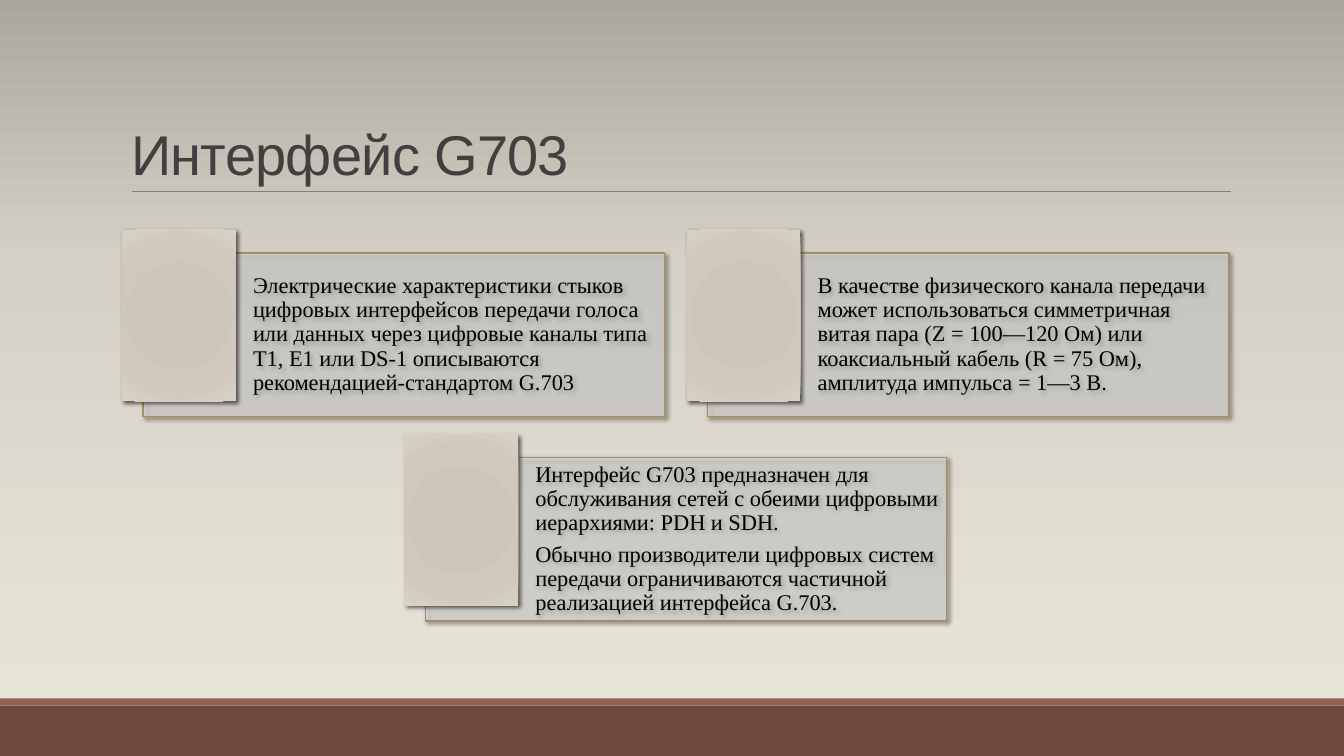
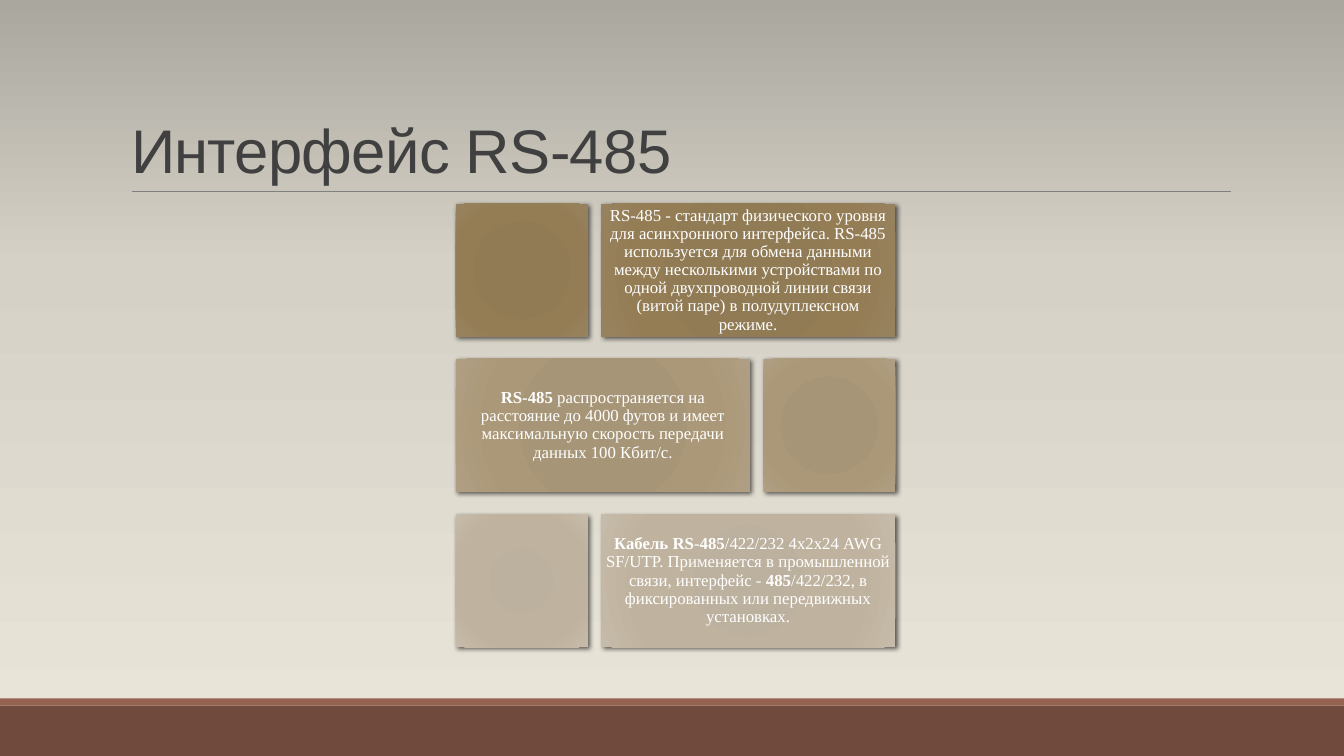
from lxml import etree
from pptx import Presentation
from pptx.dml.color import RGBColor
from pptx.enum.shapes import MSO_CONNECTOR, MSO_SHAPE
from pptx.enum.text import MSO_ANCHOR, MSO_AUTO_SIZE, PP_ALIGN
from pptx.oxml.ns import qn
from pptx.util import Inches, Pt

RECT = MSO_SHAPE.RECTANGLE
STRAIGHT = MSO_CONNECTOR.STRAIGHT
LEFT, CENTER = PP_ALIGN.LEFT, PP_ALIGN.CENTER
BOTTOM, MIDDLE = MSO_ANCHOR.BOTTOM, MSO_ANCHOR.MIDDLE
NO_FIT = MSO_AUTO_SIZE.NONE

TITLE_FONT, BODY_FONT = "Arial", "Times New Roman"
TITLE_COLOR, RULE_COLOR, CARD_LINE = "404040", "808080", "A28E6A"
BAND_COLOR, STRIPE_COLOR = "704A3D", "956251"
BACKGROUND = [(0, "EBE6DA"), (65, "D5D1C6"), (100, "AAA79F")]


def circle_stops(*colors):
    """Pair four colours with the stops of a tile gradient."""
    return list(zip((0, 34, 70, 100), colors))


PICTURE_TILE = circle_stops("CBC3B7", "CCC5BA", "D0C8BC", "D8D1C6")
ROW_TILES = [
    circle_stops("907A53", "907B55", "947D55", "96825E"),
    circle_stops("A69476", "A79578", "AB9879", "AF9E83"),
    circle_stops("BBAE9C", "BCB09E", "BFB39F", "C6BBAA"),
]

G703_CARDS = [
    (1.21, 2.28, ["Электрические характеристики стыков цифровых интерфейсов передачи "
                  "голоса или данных через цифровые каналы типа T1, E1 или DS-1 "
                  "описываются рекомендацией-стандартом G.703"]),
    (6.81, 2.28, ["В качестве физического канала передачи может использоваться "
                  "симметричная витая пара (Z = 100—120 Ом) или коаксиальный кабель "
                  "(R = 75 Ом), амплитуда импульса = 1—3 В."]),
    (4.01, 4.31, ["Интерфейс G703 предназначен для обслуживания сетей с обеими "
                  "цифровыми иерархиями: PDH и SDH.",
                  "Обычно производители цифровых систем передачи ограничиваются "
                  "частичной реализацией интерфейса G.703."]),
]

RS485_ROWS = [
    "RS-485 - стандарт физического уровня для асинхронного интерфейса. RS-485 "
    "используется для обмена данными между несколькими устройствами по одной "
    "двухпроводной линии связи (витой паре) в полудуплексном режиме.",
    "*RS-485* распространяется на расстояние до 4000 футов и имеет максимальную "
    "скорость передачи данных 100 Кбит/с.",
    "*Кабель RS*-*485*/422/232 4х2х24 AWG SF/UTP. Применяется в промышленной связи, "
    "интерфейс - *485*/422/232, в фиксированных или передвижных установках.",
]


def rgb(color):
    """Turn a hex string into a colour."""
    return RGBColor.from_string(color)


def add_child(parent, tag, **attrs):
    """Append a DrawingML element and return it."""
    child = etree.SubElement(parent, qn(tag))
    for name, value in attrs.items():
        child.set(name, str(value))
    return child


def set_gradient(fill, parent, stops, angle=None):
    """Give a linear gradient, or a circular one when no angle is given."""
    fill.solid()
    fill.fore_color.rgb = rgb(stops[0][1])
    grad = etree.Element(qn("a:gradFill"))
    grad.set("rotWithShape", "1")
    gs_list = add_child(grad, "a:gsLst")
    for position, color in stops:
        gs = add_child(gs_list, "a:gs", pos=position * 1000)
        add_child(gs, "a:srgbClr", val=color)
    if angle is None:
        path = add_child(grad, "a:path", path="circle")
        add_child(path, "a:fillToRect", l=100000, t=100000, r=100000, b=100000)
    else:
        add_child(grad, "a:lin", ang=angle * 60000, scaled=0)
    parent.replace(parent.find(qn("a:solidFill")), grad)


def add_rect(s, x, y, w, h, color):
    """Add a plain rectangle without line or shadow."""
    sp = s.shapes.add_shape(RECT, Inches(x), Inches(y), Inches(w), Inches(h))
    sp.shadow.inherit = False
    sp.fill.solid()
    sp.fill.fore_color.rgb = rgb(color)
    sp.line.fill.background()
    return sp


def add_shadow(sp, blur):
    """Add a soft shadow to the lower right."""
    effects = sp.element.spPr.find(qn("a:effectLst"))
    shadow = add_child(effects, "a:outerShdw", blurRad=Pt(blur), dist=Pt(2),
                       dir=45 * 60000, algn="tl", rotWithShape=0)
    color = add_child(shadow, "a:srgbClr", val="000000")
    add_child(color, "a:alpha", val=60000)


def add_tile(s, x, y, w, h, stops, blur):
    """Add a rectangle with a circular gradient and a shadow."""
    sp = add_rect(s, x, y, w, h, stops[0][1])
    set_gradient(sp.fill, sp.element.spPr, stops)
    add_shadow(sp, blur)
    return sp


def set_text(sp, paragraphs, size, color, align, inset, left_inset):
    """Write paragraphs into a shape, with bold parts between asterisks."""
    tf = sp.text_frame
    tf.word_wrap = True
    tf.vertical_anchor = MIDDLE
    tf.margin_left = Inches(left_inset)
    tf.margin_top = tf.margin_right = tf.margin_bottom = Inches(inset)
    for i, text in enumerate(paragraphs):
        p = tf.paragraphs[0] if i == 0 else tf.add_paragraph()
        p.alignment = align
        p.line_spacing = 0.9
        p.space_after = Pt(size * 0.35)
        p.font.name = BODY_FONT
        p.font.size = Pt(size)
        p.font.color.rgb = rgb(color)
        for j, part in enumerate(text.split("*")):
            if part:
                r = p.add_run()
                r.text = part
                if j % 2:
                    r.font.bold = True


def add_card(s, x, y, paragraphs):
    """Add a translucent text card with a tile over its left corner."""
    sp = add_rect(s, x + 0.21, y + 0.23, 5.17, 1.62, "FFFFFF")
    color = sp.element.spPr.find(qn("a:solidFill"))[0]
    add_child(color, "a:alpha", val=40000)
    sp.line.color.rgb = rgb(CARD_LINE)
    sp.line.width = Pt(1)
    add_shadow(sp, 3)
    set_text(sp, paragraphs, 16, "000000", LEFT, 0.07, 1.09)
    add_tile(s, x, y, 1.13, 1.7, PICTURE_TILE, 3)


def add_rows(s, texts):
    """Add rows of a square and a text tile that swap sides in turn."""
    left, top, square, wide, height, gap, pitch = 4.52, 2.02, 1.31, 2.92, 1.32, 0.13, 1.54
    for i, (text, stops) in enumerate(zip(texts, ROW_TILES)):
        y = top + i * pitch
        if i % 2:
            wide_x, square_x = left, left + wide + gap
        else:
            wide_x, square_x = left + square + gap, left
        sp = add_tile(s, wide_x, y, wide, height, stops, 3.5)
        set_text(sp, [text], 12, "FFFFFF", CENTER, 0.05, 0.05)
        add_tile(s, square_x, y, square, height, stops, 3.5)


def style_template(prs, layout, s):
    """Set the background, and move the bands and title rule to the layout."""
    fill = prs.slide_master.background.fill
    fill.solid()
    bg = prs.slide_master.element.cSld.find(qn("p:bg"))
    set_gradient(fill, bg.find(qn("p:bgPr")), BACKGROUND, 270)
    band = add_rect(s, 0, 7, 13.33, 0.5, BAND_COLOR)
    stripe = add_rect(s, 0, 6.93, 13.33, 0.07, STRIPE_COLOR)
    rule = s.shapes.add_connector(STRAIGHT, Inches(1.31), Inches(1.9),
                                  Inches(12.21), Inches(1.9))
    rule.line.color.rgb = rgb(RULE_COLOR)
    rule.line.width = Pt(0.5)
    add_child(rule.element.spPr, "a:effectLst")
    tree = layout.element.cSld.spTree
    for i, sp in enumerate((band, stripe, rule)):
        sp.element.xpath(".//p:cNvPr")[0].set("id", str(100 + i))
        tree.insert(2 + i, sp.element)


def set_title(s, text, size):
    """Place and format the title."""
    title = s.shapes.title
    title.left, title.top = Inches(1.2), Inches(0.31)
    title.width, title.height = Inches(11), Inches(1.59)
    tf = title.text_frame
    tf.vertical_anchor = BOTTOM
    tf.auto_size = NO_FIT
    p = tf.paragraphs[0]
    p.alignment = LEFT
    p.line_spacing = 0.85
    p.font.name = TITLE_FONT
    p.font.size = Pt(size)
    p.font.color.rgb = rgb(TITLE_COLOR)
    r = p.add_run()
    r.text = text
    r.font.bold = False
    r.font._element.set("spc", "-50")


def main():
    """Build the two slides."""
    prs = Presentation()
    prs.slide_width, prs.slide_height = Inches(13.33), Inches(7.5)
    layout = prs.slide_layouts[5]

    s = prs.slides.add_slide(layout)
    style_template(prs, layout, s)
    set_title(s, "Интерфейс G703", 40)
    for x, y, paragraphs in G703_CARDS:
        add_card(s, x, y, paragraphs)

    s = prs.slides.add_slide(layout)
    set_title(s, "Интерфейс RS-485", 44)
    add_rows(s, RS485_ROWS)

    prs.save("out.pptx")


if __name__ == "__main__":
    main()
